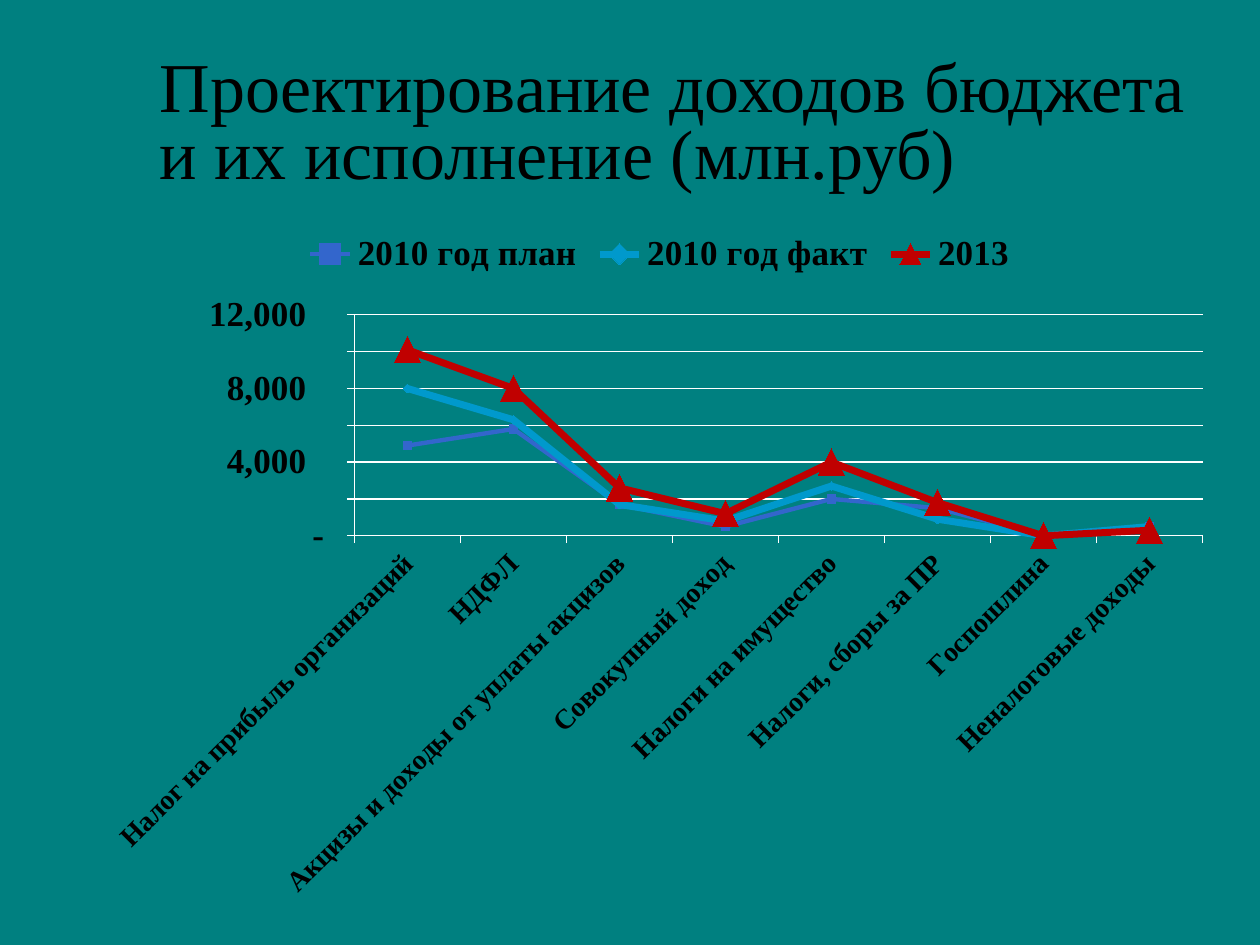
from lxml import etree
from pptx import Presentation
from pptx.chart.data import CategoryChartData
from pptx.dml.color import RGBColor
from pptx.enum.chart import XL_CHART_TYPE as ChartType, XL_LEGEND_POSITION as LegendPosition
from pptx.enum.chart import XL_MARKER_STYLE as Marker, XL_TICK_MARK as TickMark
from pptx.enum.text import MSO_ANCHOR as Anchor
from pptx.oxml.ns import qn
from pptx.util import Cm, Pt

TEAL = RGBColor(0x00, 0x80, 0x80)
BLACK = RGBColor(0x00, 0x00, 0x00)
WHITE = RGBColor(0xFF, 0xFF, 0xFF)
BLUE = RGBColor(0x33, 0x66, 0xCC)
CYAN = RGBColor(0x00, 0x99, 0xCC)
RED = RGBColor(0xC0, 0x00, 0x00)
FONT = "Times New Roman"

HEADING = "Проектирование доходов бюджета и их исполнение (млн.руб)"
INCOME_SOURCES = [
    "Налог на прибыль организаций", "НДФЛ", "Акцизы и доходы от уплаты акцизов",
    "Совокупный доход", "Налоги на имущество", "Налоги, сборы за ПР",
    "Госпошлина", "Неналоговые доходы",
]
BUDGETS = [
    ("2010 год план", [4900, 5800, 1700, 500, 2000, 1500, 0, 500], BLUE, 2.5, Marker.SQUARE, 5),
    ("2010 год факт", [8000, 6300, 1700, 800, 2700, 900, 0, 500], CYAN, 4, Marker.DIAMOND, 5),
    ("2013", [10100, 8000, 2600, 1200, 4000, 1800, 0, 300], RED, 4, Marker.TRIANGLE, 15),
]
ROUBLES = '_-* #,##0_р_._-;\\-* #,##0_р_._-;_-* "-"?'
PLOT_AREA = {"x": 0.23, "y": 0.14, "w": 0.75, "h": 0.32}


def style_font(font, size, bold=False):
    font.name = FONT
    font.size = Pt(size)
    font.bold = bold
    font.color.rgb = BLACK


def style_line(line, color, width):
    line.color.rgb = color
    line.width = Pt(width)


def place_plot(chart):
    plot_area = chart.plots[0]._element.getparent()
    layout = plot_area.find(qn("c:layout"))
    if layout is None:
        layout = etree.Element(qn("c:layout"))
        plot_area.insert(0, layout)
    manual = etree.SubElement(layout, qn("c:manualLayout"))
    settings = {"layoutTarget": "inner", "xMode": "edge", "yMode": "edge", **PLOT_AREA}
    for tag, value in settings.items():
        etree.SubElement(manual, qn(f"c:{tag}")).set("val", str(value))


def add_heading(slide):
    heading = slide.shapes.add_textbox(Cm(2.97), Cm(0.76), Cm(21.8), Cm(3.25))
    frame = heading.text_frame
    frame.word_wrap = True
    frame.vertical_anchor = Anchor.BOTTOM
    frame.text = HEADING
    paragraph = frame.paragraphs[0]
    paragraph.line_spacing = 0.8
    style_font(paragraph.runs[0].font, 40)


def add_income_chart(slide):
    income = CategoryChartData()
    income.categories = INCOME_SOURCES
    for name, values, *_ in BUDGETS:
        income.add_series(name, values)
    chart = slide.shapes.add_chart(
        ChartType.LINE_MARKERS, Cm(1.9), Cm(4.4), Cm(22.8), Cm(13.92), income).chart
    chart.has_title = False
    style_font(chart.font, 10)
    chart.font.color.rgb = WHITE
    chart.has_legend = True
    chart.legend.position = LegendPosition.TOP
    chart.legend.include_in_layout = False
    style_font(chart.legend.font, 20, True)

    sources, roubles = chart.category_axis, chart.value_axis
    for axis, size in ((sources, 16), (roubles, 20)):
        axis.major_tick_mark = TickMark.OUTSIDE
        style_font(axis.tick_labels.font, size, True)
        style_line(axis.format.line, WHITE, 0.75)
    sources._element.find(qn("c:txPr")).find(qn("a:bodyPr")).set("rot", "-2700000")
    roubles.minimum_scale, roubles.maximum_scale, roubles.major_unit = 0, 12000, 2000
    roubles.has_major_gridlines = True
    style_line(roubles.major_gridlines.format.line, WHITE, 0.75)
    roubles.tick_labels.number_format = ROUBLES
    roubles.tick_labels.number_format_is_linked = False

    plot = chart.plots[0]
    plot.vary_by_categories = False
    for series, (_, _, color, width, symbol, size) in zip(plot.series, BUDGETS):
        series.smooth = False
        style_line(series.format.line, color, width)
        series.marker.style = symbol
        series.marker.size = size
        series.marker.format.fill.solid()
        series.marker.format.fill.fore_color.rgb = color
        series.marker.format.line.color.rgb = color
    place_plot(chart)


def main():
    deck = Presentation()
    deck.slide_width, deck.slide_height = Cm(25.4), Cm(19.05)
    slide = deck.slides.add_slide(deck.slide_layouts[6])
    slide.background.fill.solid()
    slide.background.fill.fore_color.rgb = TEAL
    add_heading(slide)
    add_income_chart(slide)
    deck.save("out.pptx")


if __name__ == "__main__":
    main()
